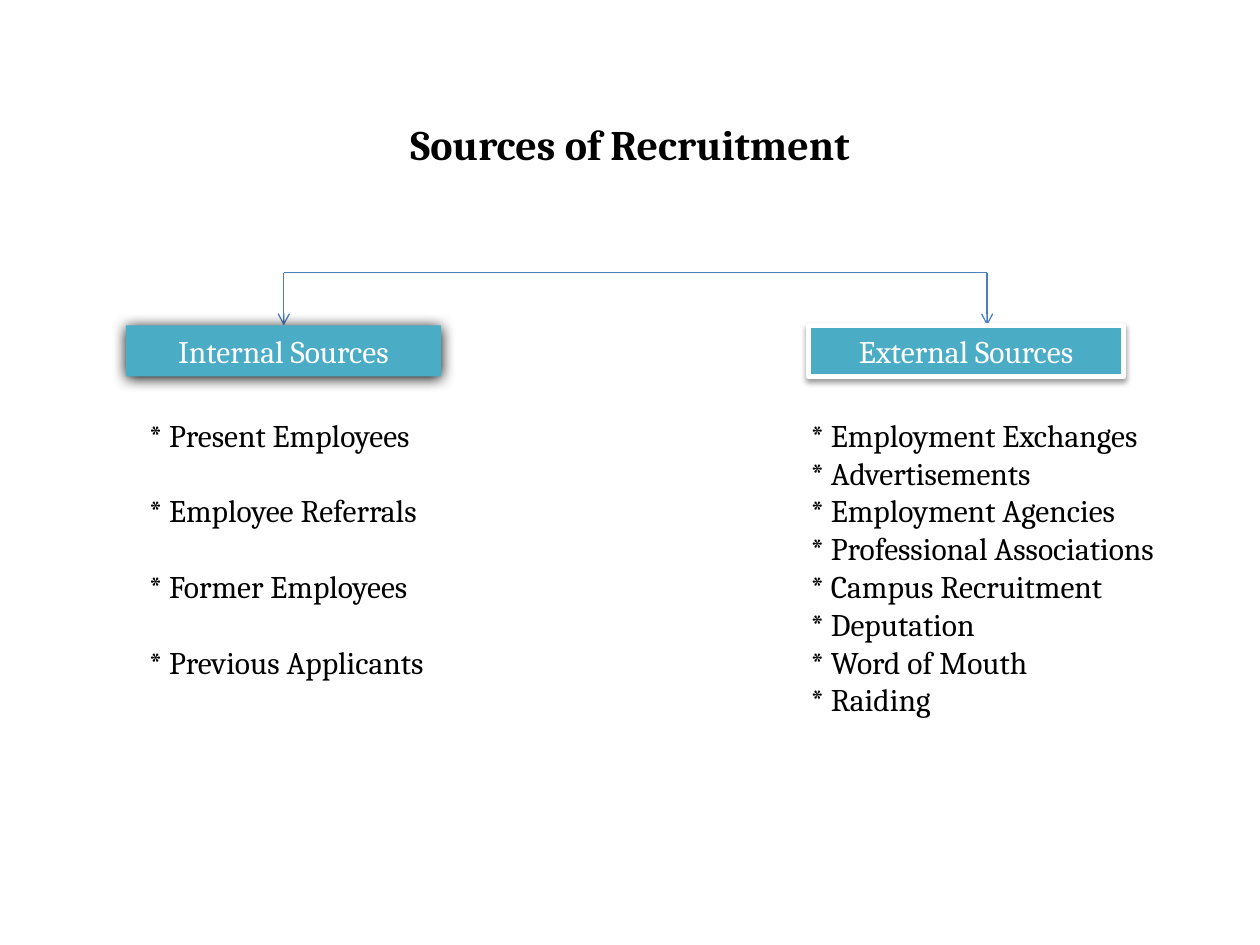
from lxml import etree
from pptx import Presentation
from pptx import util as u
from pptx.dml.color import RGBColor
from pptx.enum import shapes, text
from pptx.oxml.ns import qn

COLORS = {"text": "000000", "box": "4BACC6", "light": "FFFFFF",
          "line": "4B7EBC", "shadow": "000000"}
FONT = "Cambria"
INTERNAL = ["Present Employees", "Employee Referrals", "Former Employees",
            "Previous Applicants"]
EXTERNAL = ["Employment Exchanges", "Advertisements", "Employment Agencies",
            "Professional Associations", "Campus Recruitment", "Deputation",
            "Word of Mouth", "Raiding"]


def color(name):
    return RGBColor.from_string(COLORS[name])


def write(tf, lines, size=18, fill="text", bold=False, align=None, gap=0):
    tf.word_wrap = True
    for i, line in enumerate(lines):
        p = tf.paragraphs[0] if i == 0 else tf.add_paragraph()
        p.text = line
        p.alignment = align
        p.space_before = u.Pt(gap if i else 0)
        p.font.name = FONT
        p.font.size = u.Pt(size)
        p.font.bold = bold
        p.font.color.rgb = color(fill)


def add_text(s, left, top, width, height, lines, **style):
    tf = s.shapes.add_textbox(u.Cm(left), u.Cm(top), u.Cm(width), u.Cm(height)).text_frame
    write(tf, lines, **style)
    return tf


def add_line(s, x1, y1, x2, y2, arrow=False):
    line = s.shapes.add_connector(shapes.MSO_CONNECTOR.STRAIGHT,
                                  u.Cm(x1), u.Cm(y1), u.Cm(x2), u.Cm(y2))
    line.line.color.rgb = color("line")
    line.line.width = u.Pt(0.75)
    if arrow:
        etree.SubElement(line.line._get_or_add_ln(), qn("a:tailEnd"), type="arrow")
    etree.SubElement(line._element.spPr, qn("a:effectLst"))


def add_shadow(sp, alpha, blur, dist):
    sp.shadow.inherit = False
    effects = sp._element.spPr.find(qn("a:effectLst"))
    shadow = etree.SubElement(effects, qn("a:outerShdw"), blurRad=str(u.Pt(blur)),
                              dist=str(u.Pt(dist)), dir="5400000", rotWithShape="0")
    clr = etree.SubElement(shadow, qn("a:srgbClr"), val=COLORS["shadow"])
    etree.SubElement(clr, qn("a:alpha"), val=str(alpha * 1000))


def add_box(s, left, label, alpha, blur, dist, border=0):
    sp = s.shapes.add_shape(shapes.MSO_SHAPE.RECTANGLE,
                            u.Cm(left), u.Cm(6.56), u.Cm(6.35), u.Cm(1.03))
    sp.fill.solid()
    sp.fill.fore_color.rgb = color("box")
    if border:
        sp.line.color.rgb = color("light")
        sp.line.width = u.Pt(border)
    else:
        sp.line.fill.background()
    add_shadow(sp, alpha, blur, dist)
    write(sp.text_frame, [label], fill="light", align=text.PP_ALIGN.CENTER)


def add_list(s, left, width, height, items, gap=0):
    add_text(s, left, 8.26, width, height, [f"* {item}" for item in items], gap=gap)


def main():
    prs = Presentation()
    prs.slide_width, prs.slide_height = u.Cm(25.4), u.Cm(19.05)
    s = prs.slides.add_slide(prs.slide_layouts[6])

    title = add_text(s, 1.27, 1.7, 22.86, 2.41, ["Sources of Recruitment"],
                     size=24, bold=True, align=text.PP_ALIGN.CENTER)
    title.vertical_anchor = text.MSO_ANCHOR.MIDDLE

    left_x, right_x, bar_y, box_y = 5.72, 19.9, 5.5, 6.56
    add_line(s, left_x, bar_y, right_x, bar_y)
    for x in (left_x, right_x):
        add_line(s, x, bar_y, x, box_y, arrow=True)

    add_box(s, 16.3, "External Sources", 38, 3.1, 1.6, border=3)
    add_box(s, 2.54, "Internal Sources", 100, 8.5, 1)
    add_list(s, 2.75, 6.35, 5.64, INTERNAL, gap=21.6)
    add_list(s, 16.09, 8.04, 6.4, EXTERNAL)
    prs.save("out.pptx")


if __name__ == "__main__":
    main()
